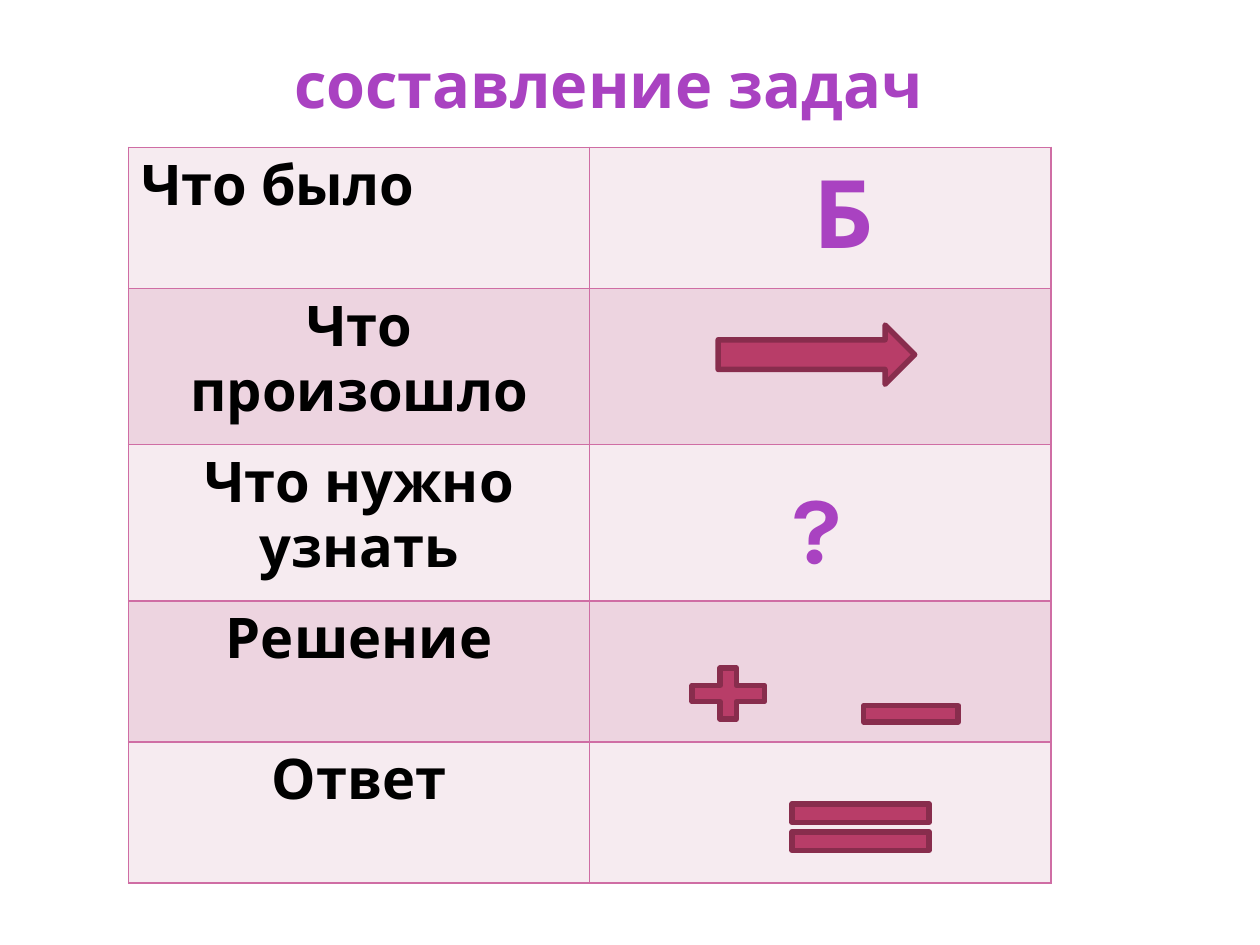
from lxml import etree
from pptx import Presentation
from pptx.dml.color import RGBColor
from pptx.enum.shapes import MSO_SHAPE as Shape
from pptx.enum.text import MSO_ANCHOR as Anchor, MSO_AUTO_SIZE as Fit, PP_ALIGN as Align
from pptx.oxml import parse_xml
from pptx.oxml.ns import nsdecls
from pptx.util import Emu, Pt

PX = 9144  # 100 px to the inch
FONT = "Karla"
VIOLET, BLACK = "A942C1", "000000"
ROSE, WINE, EDGE = "B83D68", "882D4D", "CF6DA4"
BANDS = ["F6EBF0", "EDD4E0"]
ROWS = [
    ("Что было", 112, Align.LEFT),
    ("Что произошло", 124, Align.CENTER),
    ("Что нужно узнать", 124, Align.CENTER),
    ("Решение", 112, Align.CENTER),
    ("Ответ", 112, Align.CENTER),
]
# Offsets from the table's corner: x, y, width, height
SIGNS = [
    (Shape.RIGHT_ARROW, (468, 141, 156, 47)),
    (Shape.MATH_PLUS, (437, 406, 78, 55)),
    (Shape.MATH_MINUS, (570, 422, 102, 55)),
    (Shape.MATH_EQUAL, (507, 508, 148, 63)),
]
GLYPHS = [("Б", (523, 0, 89, 101)), ("?", (476, 250, 141, 101))]


def px(*vals):
    return [Emu(val * PX) for val in vals]


def color(code):
    return RGBColor.from_string(code)


def write(frame, text, size, code, align=Align.CENTER):
    frame.text = text
    frame.word_wrap = True
    para = frame.paragraphs[0]
    para.alignment = align
    font = para.runs[0].font
    font.name, font.size, font.bold = FONT, Pt(size), True
    font.color.rgb = color(code)


def add_title(slide, box):
    title = slide.shapes.title
    title.left, title.top, title.width, title.height = px(*box)
    write(title.text_frame, "составление задач", 36, VIOLET)
    title.text_frame.vertical_anchor = Anchor.TOP
    title.text_frame.auto_size = Fit.SHAPE_TO_FIT_TEXT


def edge_cell(cell):
    props = cell._tc.get_or_add_tcPr()
    for spot, side in enumerate("LRTB"):
        props.insert(spot, parse_xml(
            f'<a:ln{side} {nsdecls("a")} w="12700"><a:solidFill>'
            f'<a:srgbClr val="{EDGE}"/></a:solidFill></a:ln{side}>'))


def add_grid(slide, box):
    table = slide.shapes.add_table(len(ROWS), 2, *px(*box)).table
    for col in table.columns:
        col.width = Emu(box[2] * PX // 2)
    for num, (label, high, align) in enumerate(ROWS):
        table.rows[num].height = Emu(high * PX)
        for cell in table.rows[num].cells:
            cell.fill.solid()
            cell.fill.fore_color.rgb = color(BANDS[num % 2])
            edge_cell(cell)
        write(table.cell(num, 0).text_frame, label, 32, BLACK, align)


def add_signs(slide, box):
    left, top = box[:2]
    # Arrow and arithmetic signs
    for kind, (x, y, w, h) in SIGNS:
        sign = slide.shapes.add_shape(kind, *px(left + x, top + y, w, h))
        sign.shadow.inherit = False
        sign.fill.solid()
        sign.fill.fore_color.rgb = color(ROSE)
        sign.line.color.rgb = color(WINE)
        sign.line.width = Pt(3.15)
    # Letter and question mark
    for text, (x, y, w, h) in GLYPHS:
        frame = slide.shapes.add_textbox(*px(left + x, top + y, w, h)).text_frame
        write(frame, text, 54, VIOLET)
        frame.auto_size = Fit.SHAPE_TO_FIT_TEXT


def main():
    deck = Presentation()
    deck.slide_width, deck.slide_height = px(1000, 750)
    slide = deck.slides.add_slide(deck.slide_layouts[5])
    grid = (102, 117, 732, 584)
    add_title(slide, (203, 31, 560, 71))
    add_grid(slide, grid)
    add_signs(slide, grid)
    deck.save("out.pptx")


if __name__ == "__main__":
    main()
